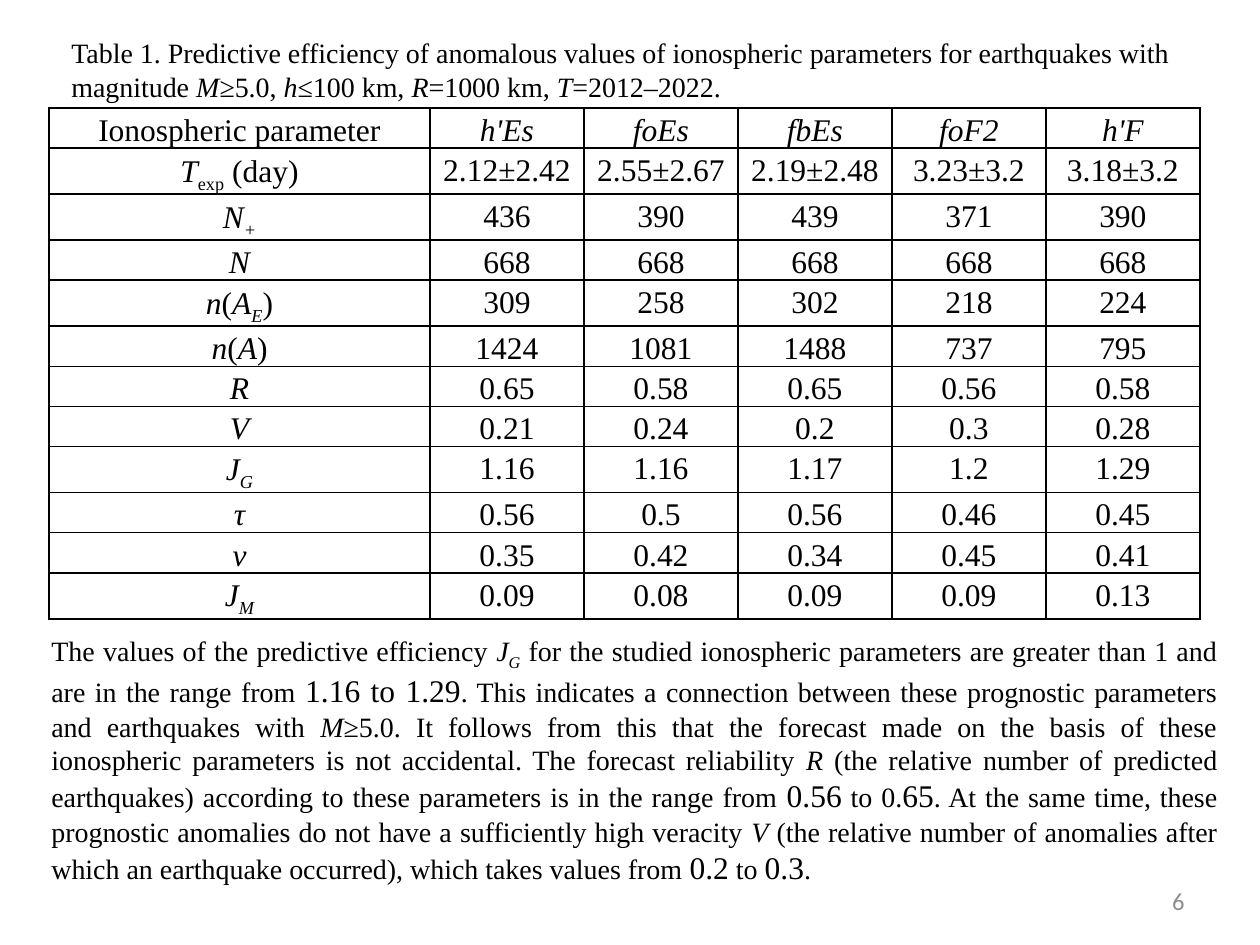
from dataclasses import dataclass

from lxml.etree import SubElement
from pptx import Presentation
from pptx.dml.color import RGBColor
from pptx.enum.text import MSO_ANCHOR as Anchor, MSO_AUTO_SIZE as AutoSize, PP_ALIGN as Align
from pptx.oxml import parse_xml
from pptx.oxml.ns import nsdecls, qn
from pptx.util import Emu, Pt

BLACK = RGBColor(0x00, 0x00, 0x00)
GRAY = RGBColor(0x8C, 0x8C, 0x8C)
SERIF = "Times New Roman"
EMU_PER_PX = 914400 / 126


@dataclass(frozen=True)
class Run:
    text: str
    italic: bool = False
    sub: bool = False
    size: int | None = None


@dataclass(frozen=True)
class TextBox:
    box: tuple[int, int, int, int]
    runs: list[Run]
    align: Align = Align.LEFT
    anchor: Anchor = Anchor.TOP
    auto_size: AutoSize = AutoSize.SHAPE_TO_FIT_TEXT
    size: int = 16
    font: str = SERIF
    color: RGBColor = BLACK


@dataclass(frozen=True)
class Row:
    label: list[Run]
    values: list[str]
    italic: bool = False

    @property
    def height(self) -> int:
        return 46 if any(r.sub for r in self.label) else 40


def px(n: int) -> Emu:
    return Emu(round(n * EMU_PER_PX))


def it(text: str) -> Run:
    return Run(text, italic=True)


def sub(text: str, italic: bool = True) -> Run:
    return Run(text, italic=italic, sub=True)


def big(text: str) -> Run:
    return Run(text, size=18)


def set_all(obj, values: dict) -> None:
    for name, value in values.items():
        setattr(obj, name, value)


def add_runs(p, runs: list[Run], size: int, font: str = SERIF, color: RGBColor = BLACK) -> None:
    for run in runs:
        r = p.add_run()
        r.text = run.text
        set_all(r.font, {"name": font, "size": Pt(run.size or size),
                         "italic": run.italic, "bold": False})
        r.font.color.rgb = color
        if run.sub:
            r.font._element.set("baseline", "-25000")


def add_text(slide, item: TextBox) -> None:
    sp = slide.shapes.add_textbox(*map(px, item.box))
    tf = sp.text_frame
    set_all(tf, {"word_wrap": True, "auto_size": item.auto_size,
                 "vertical_anchor": item.anchor})
    p = tf.paragraphs[0]
    p.alignment = item.align
    add_runs(p, item.runs, item.size, item.font, item.color)


def add_borders(cell) -> None:
    tc_pr = cell._tc.get_or_add_tcPr()
    for i, side in enumerate("LRTB"):
        ln = parse_xml(f'<a:ln{side} {nsdecls("a")} w="{Pt(1)}"/>')
        fill = SubElement(ln, qn("a:solidFill"))
        SubElement(fill, qn("a:srgbClr"), val=str(BLACK))
        tc_pr.insert(i, ln)


def fill_cell(cell, runs: list[Run]) -> None:
    set_all(cell, {"margin_left": px(9), "margin_right": px(9),
                   "margin_top": 0, "margin_bottom": 0})
    cell.fill.background()
    add_borders(cell)
    p = cell.text_frame.paragraphs[0]
    set_all(p, {"alignment": Align.CENTER, "line_spacing": 1.15})
    add_runs(p, runs, 18)


def add_grid(slide, left: int, top: int, widths: list[int], rows: list[Row]) -> None:
    height = sum(row.height for row in rows)
    frame = slide.shapes.add_table(len(rows), len(widths), px(left), px(top),
                                   px(sum(widths)), px(height))
    table = frame.table
    set_all(table, {"first_row": False, "horz_banding": False})
    for col, width in zip(table.columns, widths):
        col.width = px(width)
    for i, row in enumerate(rows):
        table.rows[i].height = px(row.height)
        cells = [row.label] + [[Run(v, italic=row.italic)] for v in row.values]
        for j, runs in enumerate(cells):
            fill_cell(table.cell(i, j), runs)


ROWS = [
    Row([Run("Ionospheric parameter")], ["h'Es", "foEs", "fbEs", "foF2", "h'F"], italic=True),
    Row([it("T"), sub("exp", italic=False), Run(" (day)")],
        ["2.12±2.42", "2.55±2.67", "2.19±2.48", "3.23±3.2", "3.18±3.2"]),
    Row([it("N"), sub("+")], ["436", "390", "439", "371", "390"]),
    Row([it("N")], ["668"] * 5),
    Row([it("n"), Run("("), it("A"), sub("E"), Run(")")], ["309", "258", "302", "218", "224"]),
    Row([it("n"), Run("("), it("A"), Run(")")], ["1424", "1081", "1488", "737", "795"]),
    Row([it("R")], ["0.65", "0.58", "0.65", "0.56", "0.58"]),
    Row([it("V")], ["0.21", "0.24", "0.2", "0.3", "0.28"]),
    Row([it("J"), sub("G")], ["1.16", "1.16", "1.17", "1.2", "1.29"]),
    Row([it("τ")], ["0.56", "0.5", "0.56", "0.46", "0.45"]),
    Row([it("ν")], ["0.35", "0.42", "0.34", "0.45", "0.41"]),
    Row([it("J"), sub("M")], ["0.09", "0.08", "0.09", "0.09", "0.13"]),
]

CAPTION = TextBox((59, 29, 1142, 81), [
    Run("Table 1. Predictive efficiency of anomalous values of ionospheric parameters "
        "for earthquakes with magnitude "),
    it("M"), Run("≥5.0, "), it("h"), Run("≤100 km, "), it("R"), Run("=1000 km, "),
    it("T"), Run("=2012‒2022."),
], anchor=Anchor.MIDDLE)

CONCLUSION = TextBox((39, 627, 1191, 263), [
    Run("The values of the predictive efficiency "), it("J"), sub("G"),
    Run(" for the studied ionospheric parameters are greater than 1 and are in the range from "),
    big("1.16 to 1.29"),
    Run(". This indicates a connection between these prognostic parameters and earthquakes with "),
    it("M"),
    Run("≥5.0. It follows from this that the forecast made on the basis of these ionospheric "
        "parameters is not accidental. The forecast reliability "),
    it("R"),
    Run(" (the relative number of predicted earthquakes) according to these parameters "
        "is in the range from "),
    big("0.56"), Run(" to 0."), big("65"),
    Run(". At the same time, these prognostic anomalies do not have a sufficiently high veracity "),
    it("V"),
    Run(" (the relative number of anomalies after which an earthquake occurred), "
        "which takes values from "),
    big("0.2"), Run(" to "), big("0.3"), Run("."),
], align=Align.JUSTIFY)

PAGE_NUMBER = TextBox((903, 876, 294, 50), [Run("6")], align=Align.RIGHT, anchor=Anchor.MIDDLE,
                      auto_size=AutoSize.NONE, size=14, font="Calibri", color=GRAY)


def main() -> None:
    prs = Presentation()
    set_all(prs, {"slide_width": px(1260), "slide_height": px(945)})
    slide = prs.slides.add_slide(prs.slide_layouts[6])
    add_grid(slide, 49, 108, [381] + [154] * 5, ROWS)
    for item in (CAPTION, CONCLUSION, PAGE_NUMBER):
        add_text(slide, item)
    prs.save("out.pptx")


if __name__ == "__main__":
    main()
